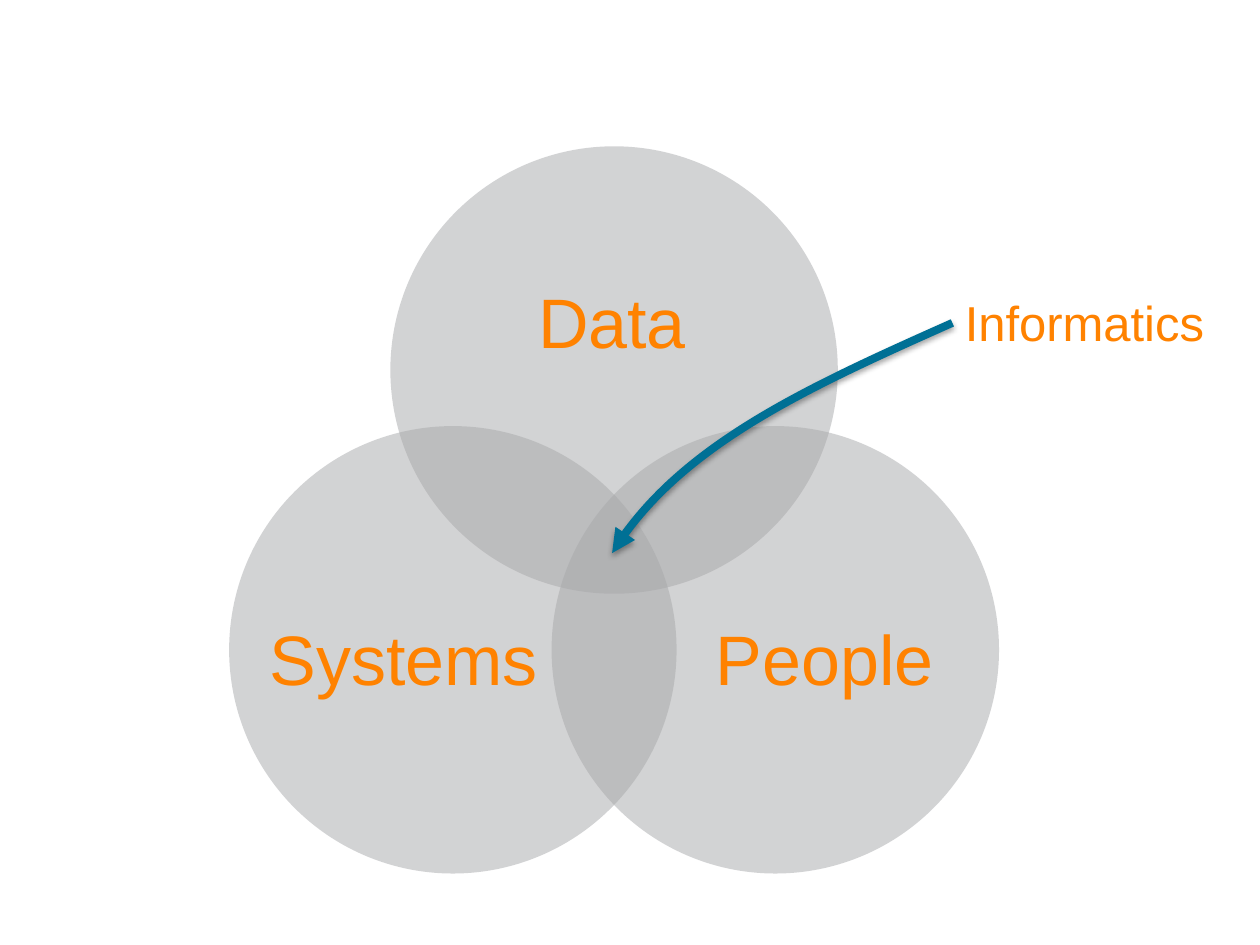
from dataclasses import dataclass

from lxml.etree import SubElement
from pptx import Presentation
from pptx.dml.color import RGBColor
from pptx.enum.shapes import MSO_SHAPE
from pptx.enum.text import MSO_ANCHOR, MSO_AUTO_SIZE, PP_ALIGN
from pptx.oxml.ns import qn
from pptx.util import Cm, Pt


@dataclass(frozen=True)
class Theme:
    font: str = "Arial"
    text: RGBColor = RGBColor(0xFF, 0x82, 0x00)
    disc: RGBColor = RGBColor(0xA7, 0xA8, 0xAA)
    arrow: RGBColor = RGBColor(0x00, 0x70, 0x95)
    big: int = 40
    small: int = 28


THEME = Theme()


def add_text(slide, text, box, size, align=PP_ALIGN.LEFT, anchor=MSO_ANCHOR.TOP,
             inset=None, wrap=True, line=None):
    """Place one line of text; box is left, top, width, height in cm."""
    shape = slide.shapes.add_textbox(*map(Cm, box))
    frame = shape.text_frame
    frame.word_wrap = wrap
    frame.auto_size = MSO_AUTO_SIZE.NONE if wrap else MSO_AUTO_SIZE.SHAPE_TO_FIT_TEXT
    frame.vertical_anchor = anchor
    if inset is not None:
        frame.margin_left = frame.margin_right = Cm(inset)
        frame.margin_top = frame.margin_bottom = Cm(inset)
    para = frame.paragraphs[0]
    para.alignment = align
    para.line_spacing = line
    run = para.add_run()
    run.text = text
    run.font.name = THEME.font
    run.font.size = Pt(size)
    run.font.color.rgb = THEME.text


def add_disc(slide, left, top, size):
    disc = slide.shapes.add_shape(MSO_SHAPE.OVAL, Cm(left), Cm(top), Cm(size), Cm(size))
    disc.shadow.inherit = False
    disc.line.fill.background()
    disc.fill.solid()
    disc.fill.fore_color.rgb = THEME.disc
    color = disc.fill._xPr.find(".//" + qn("a:srgbClr"))
    SubElement(color, qn("a:alpha"), val="50000")


def add_venn(slide, left, top, width, height, size):
    """Three discs fill the box; each label area is a share of its disc."""
    mid, right, low = (width - size) / 2, width - size, height - size
    sets = [
        ("Data", mid, 0, (0.13, 0.175, 0.73, 0.45)),
        ("People", right, low, (0.31, 0.255, 0.6, 0.55)),
        ("Systems", 0, low, (0.09, 0.255, 0.6, 0.55)),
    ]
    for name, dx, dy, (x, y, w, h) in sets:
        add_disc(slide, left + dx, top + dy, size)
        area = (left + dx + x * size, top + dy + y * size, w * size, h * size)
        add_text(slide, name, area, THEME.big, align=PP_ALIGN.CENTER,
                 anchor=MSO_ANCHOR.MIDDLE, inset=0, line=0.9)


def add_arrow(slide, left, top, width, height):
    """Curve from the top right of the box to an arrowhead at its bottom left."""
    shares = [(1, 0), (0.59, 0.27), (0.19, 0.54), (0, 1)]
    start, *rest = [(Cm(left + x * width), Cm(top + y * height)) for x, y in shares]
    pen = slide.shapes.build_freeform(*start)
    pen.add_line_segments(rest, close=False)
    arrow = pen.convert_to_shape()
    arrow.fill.background()
    arrow.line.color.rgb = THEME.arrow
    arrow.line.width = Pt(4.5)
    SubElement(arrow.line._get_or_add_ln(), qn("a:tailEnd"), type="triangle")

    # The three segments become the control points of one Bézier curve.
    route = arrow._element.find(".//" + qn("a:path"))
    curve = SubElement(route, qn("a:cubicBezTo"))
    for step in route.findall(qn("a:lnTo")):
        curve.append(step[0])
        route.remove(step)

    arrow.shadow.inherit = False
    effects = arrow._element.spPr.find(qn("a:effectLst"))
    shade = SubElement(effects, qn("a:outerShdw"), blurRad=str(Pt(3.1)),
                       dist=str(Pt(1.8)), dir="5400000", rotWithShape="0")
    color = SubElement(shade, qn("a:srgbClr"), val="000000")
    SubElement(color, qn("a:alpha"), val="35000")


def add_callout(slide, left, top, width, height):
    """Label at the right of the box, with an arrow to its bottom left."""
    reach, drop = 6.86, 0.74
    add_text(slide, "Informatics", (left + reach, top, width - reach, 1.45),
             THEME.small, wrap=False)
    add_arrow(slide, left, top + drop, reach, height - drop)


def main():
    deck = Presentation()
    deck.slide_width, deck.slide_height = Cm(25.4), Cm(19.05)
    slide = deck.slides.add_slide(deck.slide_layouts[6])
    add_venn(slide, 4.62, 2.95, 15.52, 14.66, size=9.02)
    add_callout(slide, 12.34, 5.77, 12.27, 5.38)
    deck.save("out.pptx")


if __name__ == "__main__":
    main()
